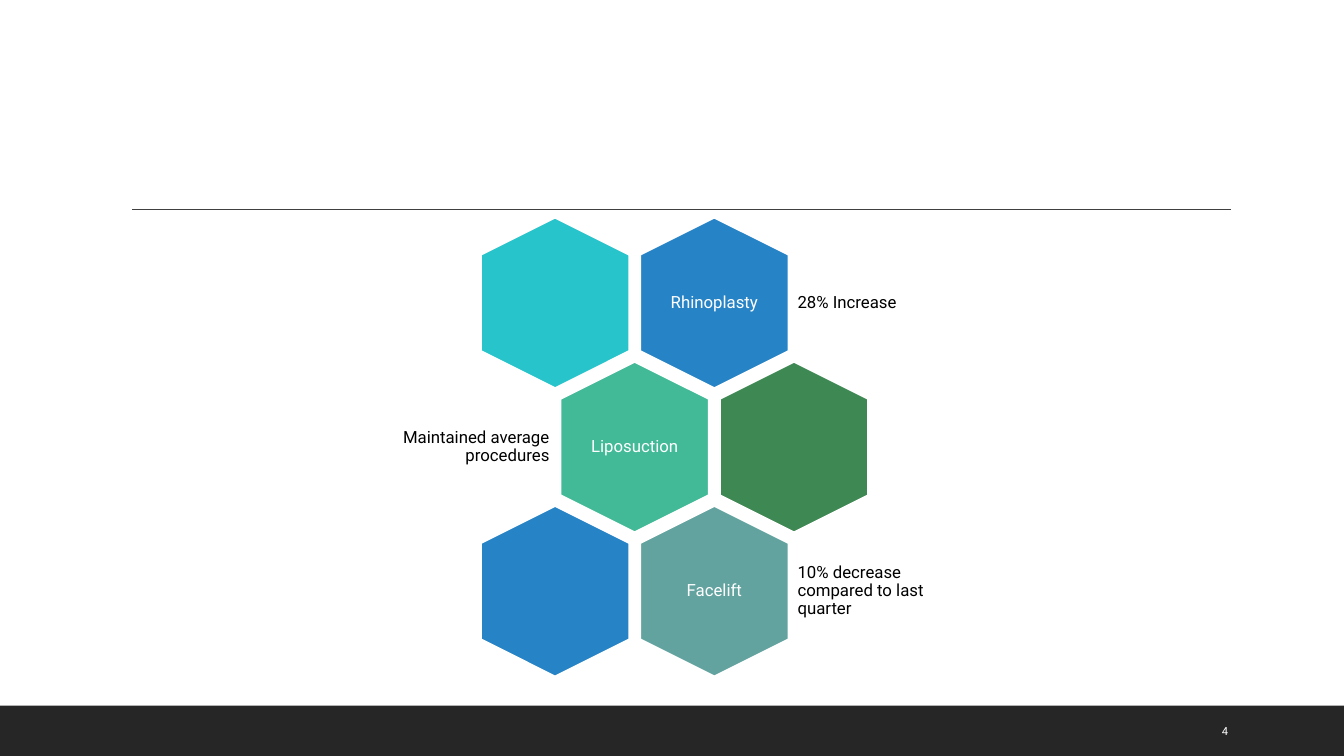
from dataclasses import dataclass

from lxml import etree
from pptx import Presentation
from pptx.dml.color import RGBColor
from pptx.enum.shapes import MSO_CONNECTOR, MSO_SHAPE
from pptx.enum.text import MSO_ANCHOR, PP_ALIGN
from pptx.oxml.ns import qn
from pptx.util import Inches, Pt

HEXAGON, BAR = MSO_SHAPE.HEXAGON, MSO_SHAPE.RECTANGLE
STRAIGHT = MSO_CONNECTOR.STRAIGHT
MIDDLE = MSO_ANCHOR.MIDDLE
LEFT, CENTER, RIGHT = PP_ALIGN.LEFT, PP_ALIGN.CENTER, PP_ALIGN.RIGHT


@dataclass(frozen=True)
class Theme:
    font: str = "Roboto"
    body: float = 12
    small: float = 8
    white: str = "FFFFFF"
    black: str = "000000"
    footer: str = "262626"
    rule: str = "404040"
    blue: str = "2683C6"
    cyan: str = "28C4CC"
    mint: str = "42BA97"
    green: str = "3E8853"
    sage: str = "62A39F"


theme = Theme()
WIDTH, HEIGHT = 13.33, 7.5
FOOTER_TOP = 7
HEX_LONG, HEX_SHORT = 1.69, 1.47
GRID_LEFT, GRID_TOP = 4.66, 2.27
HALF_COLUMN, ROW = 0.79, 1.43
LABEL_WIDTH, LABEL_HEIGHT = 1.01, 1.16
NOTE_HEIGHT = 1.01

deck = Presentation()
deck.slide_width, deck.slide_height = Inches(WIDTH), Inches(HEIGHT)
slide = deck.slides.add_slide(deck.slide_layouts[6])


def add_text(text, left, top, width, height, *, size=theme.body, color=theme.black,
             align=LEFT, inset=0.05, spacing=0.9):
    frame = slide.shapes.add_textbox(
        Inches(left), Inches(top), Inches(width), Inches(height)).text_frame
    frame.word_wrap = True
    frame.vertical_anchor = MIDDLE
    frame.margin_left = frame.margin_right = Inches(inset)
    frame.margin_top = frame.margin_bottom = Inches(0.05)
    paragraph = frame.paragraphs[0]
    paragraph.alignment = align
    paragraph.line_spacing = spacing
    run = paragraph.add_run()
    run.text = text
    run.font.name = theme.font
    run.font.size = Pt(size)
    run.font.color.rgb = RGBColor.from_string(color)


def add_filled(kind, left, top, width, height, color):
    shape = slide.shapes.add_shape(
        kind, Inches(left), Inches(top), Inches(width), Inches(height))
    shape.shadow.inherit = False
    shape.fill.solid()
    shape.fill.fore_color.rgb = RGBColor.from_string(color)
    shape.line.fill.background()
    return shape


add_filled(BAR, 0, FOOTER_TOP, WIDTH, HEIGHT - FOOTER_TOP, theme.footer)

title_rule = slide.shapes.add_connector(
    STRAIGHT, Inches(1.31), Inches(2.08), Inches(12.21), Inches(2.08))
title_rule.line.color.rgb = RGBColor.from_string(theme.rule)
title_rule.line.width = Pt(1)
etree.SubElement(title_rule._element.spPr, qn("a:effectLst"))

procedures = [
    (0, 2, theme.blue, "Rhinoplasty", "28% Increase", LEFT),
    (0, 0, theme.cyan, "", "", LEFT),
    (1, 1, theme.mint, "Liposuction", "Maintained average procedures", RIGHT),
    (1, 3, theme.green, "", "", LEFT),
    (2, 2, theme.sage, "Facelift", "10% decrease compared to last quarter", LEFT),
    (2, 0, theme.blue, "", "", LEFT),
]

for row, half_column, color, procedure, trend, align in procedures:
    left = GRID_LEFT + half_column * HALF_COLUMN
    top = GRID_TOP + row * ROW
    cell = add_filled(HEXAGON, left, top, HEX_LONG, HEX_SHORT, color)
    cell.rotation = 90
    cell.adjustments[0] = 0.25
    cell.line.color.rgb = RGBColor.from_string(theme.white)
    cell.line.width = Pt(1.25)
    if procedure:
        add_text(procedure, left + (HEX_LONG - LABEL_WIDTH) / 2,
                 top + (HEX_SHORT - LABEL_HEIGHT) / 2, LABEL_WIDTH, LABEL_HEIGHT,
                 color=theme.white, align=CENTER)
        offset, width = (1.62, 1.88) if align == LEFT else (-1.77, 1.82)
        add_text(trend, left + offset, top + (HEX_SHORT - NOTE_HEIGHT) / 2,
                 width, NOTE_HEIGHT, align=align)

add_text("4", 12.02, 7.05, 0.85, 0.4, size=theme.small, color=theme.white,
         inset=0.1, spacing=1.0)

deck.save("out.pptx")
